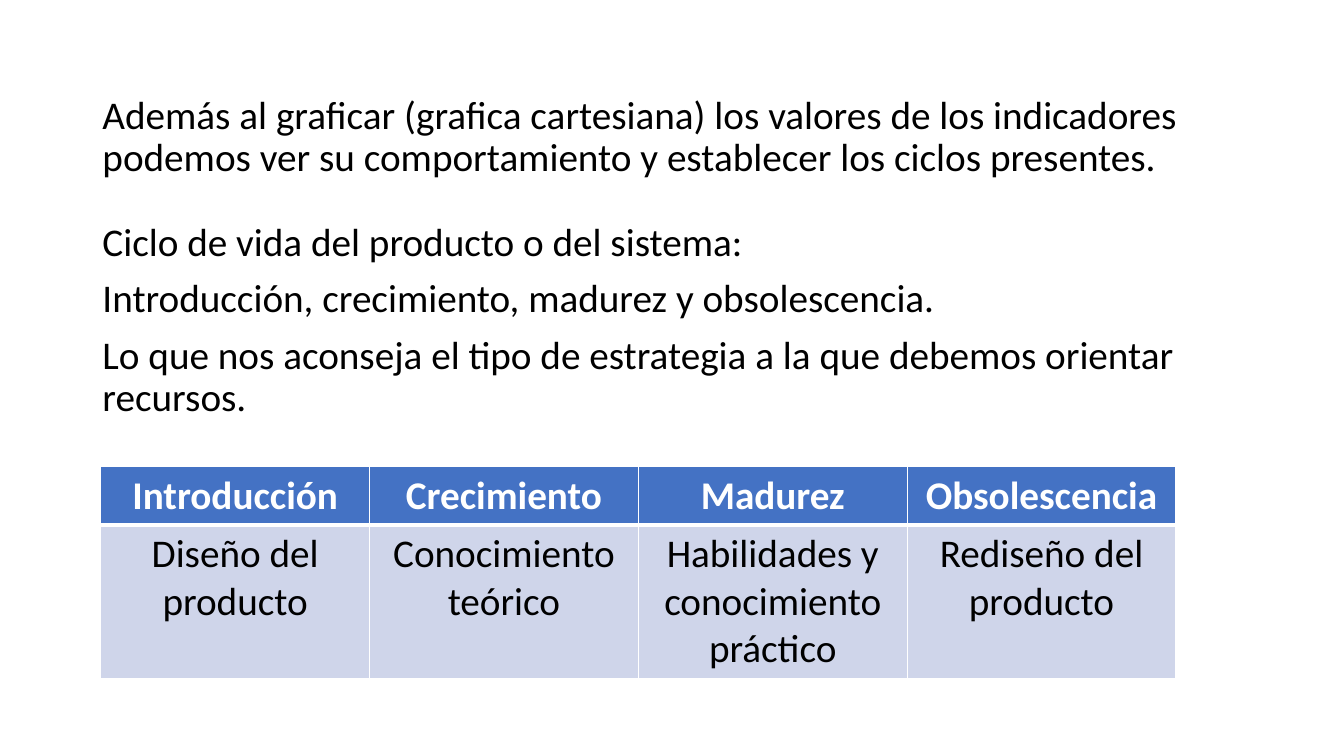
from pptx import Presentation
from pptx.dml.color import RGBColor
from pptx.enum.text import MSO_ANCHOR, MSO_AUTO_SIZE, PP_ALIGN
from pptx.oxml import parse_xml
from pptx.oxml.ns import nsdecls
from pptx.util import Inches, Pt

COLORS = {"text": "000000", "white": "FFFFFF", "header": "4472C4", "body": "CFD5EA"}
FONT, SIZE = "Calibri", 28
WIDTH, HEIGHT = 13.33, 7.5
COLS, ROWS = 80, 100

PARAGRAPHS = [
    ("Además al graficar (grafica cartesiana) los valores de los indicadores "
     "podemos ver su comportamiento y establecer los ciclos presentes.", 10),
    ("Ciclo de vida del producto o del sistema:", 30),
    ("Introducción, crecimiento, madurez y obsolescencia.", 10),
    ("Lo que nos aconseja el tipo de estrategia a la que debemos orientar recursos.", 10),
]
STAGES = [
    ("Introducción", "Diseño del producto"),
    ("Crecimiento", "Conocimiento teórico"),
    ("Madurez", "Habilidades y conocimiento práctico"),
    ("Obsolescencia", "Rediseño del producto"),
]


def x(cols):
    return Inches(WIDTH * cols / COLS)


def y(rows):
    return Inches(HEIGHT * rows / ROWS)


def rgb(name):
    return RGBColor.from_string(COLORS[name])


def set_font(p, color, bold=False):
    p.font.name, p.font.size, p.font.bold = FONT, Pt(SIZE), bold
    p.font.color.rgb = rgb(color)


def remove_bullet(p):
    pPr = p._p.get_or_add_pPr()
    pPr.set("marL", "0")
    pPr.set("indent", "0")
    pPr.insert_element_before(
        parse_xml(f"<a:buNone {nsdecls('a')}/>"), "a:tabLst", "a:defRPr", "a:extLst")


def fill_body(sp, paragraphs):
    sp.left, sp.top, sp.width, sp.height = x(5.5), y(12), x(69), y(75)
    tf = sp.text_frame
    tf.word_wrap, tf.auto_size = True, MSO_AUTO_SIZE.NONE
    tf.vertical_anchor = MSO_ANCHOR.TOP
    for i, (text, space) in enumerate(paragraphs):
        p = tf.add_paragraph() if i else tf.paragraphs[0]
        p.text = text
        p.line_spacing, p.space_before = 0.9, Pt(space)
        set_font(p, "text")
        remove_bullet(p)


def set_borders(cell, widths):
    tcPr = cell._tc.get_or_add_tcPr()
    for side, width in widths.items():
        tcPr.append(parse_xml(
            f'<a:ln{side} {nsdecls("a")} w="{Pt(width)}"><a:solidFill>'
            f'<a:srgbClr val="{COLORS["white"]}"/></a:solidFill></a:ln{side}>'))


def fill_cell(cell, text, header):
    set_borders(cell, {"L": 1, "R": 1, "T": 1 if header else 3, "B": 3 if header else 1})
    cell.fill.solid()
    cell.fill.fore_color.rgb = rgb("header" if header else "body")
    p = cell.text_frame.paragraphs[0]
    p.text = text
    p.alignment = PP_ALIGN.CENTER
    set_font(p, "white" if header else "text", header)


def add_stage_table(s, stages):
    heights = (7.6, 20.4)
    table = s.shapes.add_table(
        len(heights), len(stages), x(6), y(61.75), x(64), y(sum(heights))).table
    for row, height in zip(table.rows, heights):
        row.height = y(height)
    for c, texts in enumerate(stages):
        table.columns[c].width = x(64 / len(stages))
        for r, text in enumerate(texts):
            fill_cell(table.cell(r, c), text, header=r == 0)


def main():
    prs = Presentation()
    prs.slide_width, prs.slide_height = Inches(WIDTH), Inches(HEIGHT)
    s = prs.slides.add_slide(prs.slide_layouts[1])
    title = s.shapes.title._element
    title.getparent().remove(title)
    fill_body(s.placeholders[1], PARAGRAPHS)
    add_stage_table(s, STAGES)
    prs.save("out.pptx")


if __name__ == "__main__":
    main()
